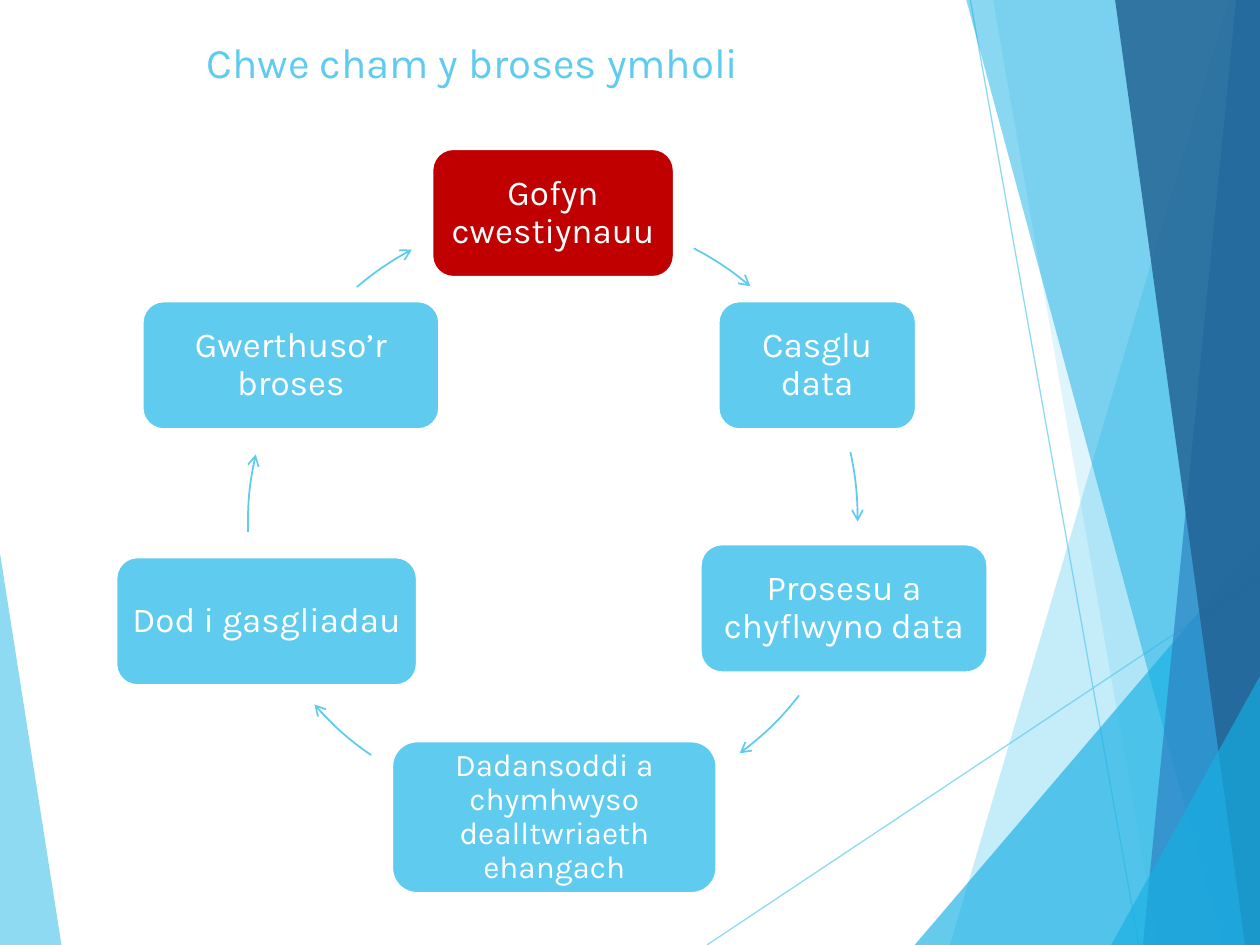
from lxml.etree import SubElement
from pptx import Presentation
from pptx.dml.color import RGBColor
from pptx.enum.shapes import MSO_CONNECTOR, MSO_SHAPE
from pptx.enum.text import MSO_ANCHOR, MSO_AUTO_SIZE, PP_ALIGN
from pptx.oxml.ns import qn
from pptx.util import Cm, Pt

COLORS = {
    "sky": "5FCBEF",
    "cyan": "17B0E4",
    "blue": "2E83C3",
    "navy": "226292",
    "red": "C00000",
    "white": "FFFFFF",
}
FONT = "Karla"
WIDTH, HEIGHT = 25.4, 19.05
CORNER = (WIDTH, HEIGHT)
RING_SIZE = 12.24


def band(top, bottom):
    """Return the points of a band between a slanted edge and the right side."""
    return [(top, 0), (bottom, HEIGHT), CORNER, (WIDTH, 0)]


def wedge(bottom, right):
    """Return the points of a triangle in the lower right corner."""
    return [(bottom, HEIGHT), (WIDTH, right), CORNER]


LEFT_WEDGE = ([(0, 11.15), (1.24, HEIGHT), (0, HEIGHT)], "sky", 70)
RAYS = [
    ((14.25, HEIGHT), (WIDTH, 11.63)),
    ((19.56, 0), (22.96, HEIGHT)),
]
RIGHT_PANELS = [
    (band(24.77, 19.15), "sky", 36),
    (band(20.02, 23.34), "sky", 20),
    (wedge(18.44, 10.9), "cyan", 66),
    (band(19.48, 24.64), "cyan", 50),
    (band(24.92, 23.04), "blue", 70),
    (band(22.48, 25.1), "navy", 82),
    (wedge(22.4, 13.63), "cyan", 66),
]
STEPS = [
    ("Gofyn cwestiynauu", (8.71, 3, 4.88, 2.59), "red", 20),
    ("Casglu data", (14.48, 6.07, 3.99, 2.59), "sky", 20),
    ("Prosesu a chyflwyno data", (14.12, 10.97, 5.79, 2.59), "sky", 20),
    ("Dadansoddi a chymhwyso dealltwriaeth ehangach",
     (7.9, 14.94, 6.55, 3.07), "sky", 18),
    ("Dod i gasgliadau", (2.34, 11.23, 6.07, 2.59), "sky", 20),
    ("Gwerthuso’r broses", (2.87, 6.07, 5.99, 2.59), "sky", 20),
]
ARROWS = [
    ((5.05, 4.32), 297.4, 310.3),
    ((5.05, 4.32), 347.5, 0.7),
    ((5.16, 4.14), 37.9, 53.6),
    ((4.83, 4.06), 124.5, 138.9),
    ((5, 4.42), 178.3, 193),
    ((5.05, 4.32), 229.5, 242.1),
]


def rgb(name):
    """Return the named colour."""
    return RGBColor.from_string(COLORS[name])


def set_alpha(parent, percent):
    """Make the solid colour inside an XML element partly transparent."""
    color = parent.find(qn("a:solidFill")).find(qn("a:srgbClr"))
    SubElement(color, qn("a:alpha"), val=str(percent * 1000))


def set_line(sp, color, width):
    """Give a shape a solid line."""
    sp.line.color.rgb = rgb(color)
    sp.line.width = Pt(width)


def set_text(tf, text, *, size, color, align=PP_ALIGN.LEFT,
             anchor=MSO_ANCHOR.TOP, spacing=1.0, inset=None):
    """Write one formatted paragraph into a text frame."""
    tf.word_wrap = True
    tf.auto_size = MSO_AUTO_SIZE.NONE
    tf.vertical_anchor = anchor
    if inset is not None:
        tf.margin_left = tf.margin_right = Cm(inset)
        tf.margin_top = tf.margin_bottom = Cm(inset)
    p = tf.paragraphs[0]
    p.alignment = align
    p.line_spacing = spacing
    r = p.add_run()
    r.text = text
    r.font.name = FONT
    r.font.size = Pt(size)
    r.font.color.rgb = rgb(color)


def add_panel(s, points, color, alpha):
    """Draw a translucent polygon."""
    start, *rest = [(Cm(x), Cm(y)) for x, y in points]
    builder = s.shapes.build_freeform(*start)
    builder.add_line_segments(rest, close=True)
    sp = builder.convert_to_shape()
    sp.shadow.inherit = False
    sp.fill.solid()
    sp.fill.fore_color.rgb = rgb(color)
    sp.line.fill.background()
    set_alpha(sp._element.spPr, alpha)


def add_ray(s, start, end):
    """Draw a thin translucent line."""
    ends = [Cm(v) for v in (*start, *end)]
    sp = s.shapes.add_connector(MSO_CONNECTOR.STRAIGHT, *ends)
    set_line(sp, "sky", 0.75)
    spPr = sp._element.spPr
    set_alpha(spPr.find(qn("a:ln")), 70)
    SubElement(spPr, qn("a:effectLst"))


def add_step(s, text, box, color, size):
    """Draw a rounded box with the name of a step."""
    sp = s.shapes.add_shape(MSO_SHAPE.ROUNDED_RECTANGLE, *map(Cm, box))
    sp.shadow.inherit = False
    sp.fill.solid()
    sp.fill.fore_color.rgb = rgb(color)
    set_line(sp, "white", 1.5)
    set_text(sp.text_frame, text, size=size, color="white",
             align=PP_ALIGN.CENTER, anchor=MSO_ANCHOR.MIDDLE,
             spacing=0.9, inset=0.2)


def add_arc_arrow(s, corner, start, end):
    """Draw a clockwise arc with an arrowhead, its angles in degrees."""
    box = [Cm(v) for v in (*corner, RING_SIZE, RING_SIZE)]
    sp = s.shapes.add_shape(MSO_SHAPE.ARC, *box)
    sp.shadow.inherit = False
    sp.fill.background()
    for i, angle in enumerate((start, end)):
        sp.adjustments[i] = angle * 0.6
    set_line(sp, "sky", 1)
    SubElement(sp._element.spPr.find(qn("a:ln")), qn("a:tailEnd"), type="arrow")


def add_title(s, text):
    """Place and format the title."""
    sp = s.shapes.title
    sp.left, sp.top, sp.width, sp.height = map(Cm, (3.91, 0.61, 17.63, 3.66))
    set_text(sp.text_frame, text, size=24, color="sky")


def main():
    """Build and save the slide."""
    prs = Presentation()
    prs.slide_width, prs.slide_height = Cm(WIDTH), Cm(HEIGHT)
    s = prs.slides.add_slide(prs.slide_layouts[5])
    add_title(s, "Chwe cham y broses ymholi")
    add_panel(s, *LEFT_WEDGE)
    for ray in RAYS:
        add_ray(s, *ray)
    for panel in RIGHT_PANELS:
        add_panel(s, *panel)
    for step, arrow in zip(STEPS, ARROWS):
        add_step(s, *step)
        add_arc_arrow(s, *arrow)
    prs.save("out.pptx")


if __name__ == "__main__":
    main()
